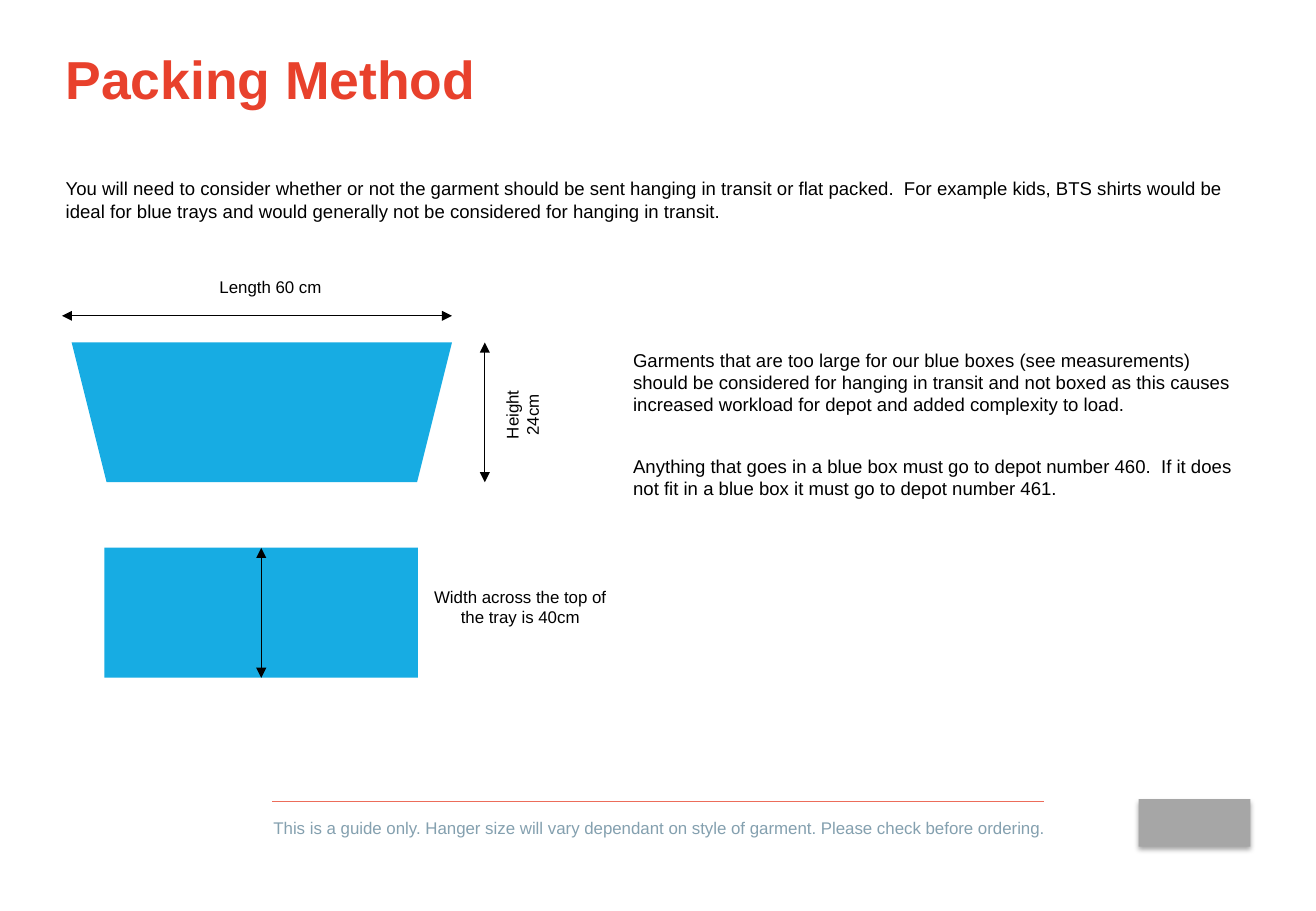
from lxml import etree
from pptx import Presentation
from pptx.dml.color import RGBColor
from pptx.enum.shapes import MSO_CONNECTOR, MSO_SHAPE
from pptx.enum.text import PP_ALIGN
from pptx.oxml.ns import qn
from pptx.util import Inches, Pt

RECTANGLE, TRAPEZOID = MSO_SHAPE.RECTANGLE, MSO_SHAPE.TRAPEZOID
STRAIGHT = MSO_CONNECTOR.STRAIGHT
LEFT, CENTER = PP_ALIGN.LEFT, PP_ALIGN.CENTER

BLACK = RGBColor(0x00, 0x00, 0x00)
RED = RGBColor(0xE8, 0x41, 0x2C)
SALMON = RGBColor(0xEC, 0x6C, 0x5A)
SLATE = RGBColor(0x84, 0xA0, 0xAF)
TRAY_BLUE = RGBColor(0x17, 0xAC, 0xE3)
GREY = RGBColor(0xA6, 0xA6, 0xA6)

COLUMNS, ROWS = 108.3, 75
MARGIN = 5.4
TRAY_TOP, TRAY_HEIGHT = 28.2, 11.5
TRAY_LEFT, TRAY_WIDTH = 5.9, 31.3
BASE_LEFT, BASE_TOP, BASE_WIDTH, BASE_HEIGHT = 8.6, 45.1, 25.8, 10.7


class Slide:
    styles = {
        "title": {"size": Pt(31.7), "bold": True, "color": RED},
        "body": {"size": Pt(11), "color": BLACK},
        "label": {"size": Pt(10), "color": BLACK},
        "footer": {"size": Pt(10), "color": SLATE},
    }

    def __init__(self, deck):
        self.page = deck.slides.add_slide(deck.slide_layouts[6])
        self.cell_width = deck.slide_width / COLUMNS
        self.cell_height = deck.slide_height / ROWS

    def place(self, *grid):
        cells = (self.cell_width, self.cell_height) * 2
        return [round(length * cell) for length, cell in zip(grid, cells)]

    def text(self, area, paragraphs, style, align=LEFT, inset=0, after=0, gap=0, vertical=False):
        box = self.page.shapes.add_textbox(*self.place(*area))
        frame = box.text_frame
        layout = {"word_wrap": True, "margin_left": inset, "margin_right": inset}
        for name, value in layout.items():
            setattr(frame, name, value)
        if vertical:
            frame._txBody.bodyPr.set("vert", "vert270")
        for index, words in enumerate(paragraphs):
            para = frame.add_paragraph() if index else frame.paragraphs[0]
            para.alignment = align
            para.space_after = Pt(after)
            if index:
                para.space_before = Pt(gap)
            span = para.add_run()
            span.text = words
            span.font.name = "Arial"
            for name, value in self.styles[style].items():
                if name == "color":
                    span.font.color.rgb = value
                else:
                    setattr(span.font, name, value)

    def block(self, area, color, kind=RECTANGLE, flipped=False):
        shape = self.page.shapes.add_shape(kind, *self.place(*area))
        shape.shadow.inherit = False
        shape.fill.solid()
        shape.fill.fore_color.rgb = color
        shape.line.fill.background()
        if flipped:
            shape._element.spPr.xfrm.set("flipV", "1")
        return shape

    def soft_shadow(self, shape):
        effects = shape._element.spPr.find(qn("a:effectLst"))
        shadow = etree.SubElement(
            effects, qn("a:outerShdw"), blurRad=str(Pt(3.1)), dist=str(Pt(1.8)),
            dir="5400000", algn="t", rotWithShape="0")
        color = etree.SubElement(shadow, qn("a:srgbClr"), val=str(BLACK))
        etree.SubElement(color, qn("a:alpha"), val="35000")

    def line(self, ends, color=BLACK, arrows=True):
        connector = self.page.shapes.add_connector(STRAIGHT, *self.place(*ends))
        connector.line.color.rgb = color
        connector.line.width = Pt(0.75)
        if arrows:
            outline = connector.line._get_or_add_ln()
            for end in ("a:headEnd", "a:tailEnd"):
                etree.SubElement(outline, qn(end), type="triangle")
        etree.SubElement(connector._element.spPr, qn("a:effectLst"))


def main():
    deck = Presentation()
    deck.slide_width, deck.slide_height = Inches(10.83), Inches(7.5)
    slide = Slide(deck)
    label = {"style": "label", "align": CENTER, "inset": Inches(0.1)}

    slide.soft_shadow(slide.block((93.7, 65.8, 9.2, 3.9), GREY))
    slide.text((21.8, 66.8, 64.8, 2.7), [
        "This is a guide only. Hanger size will vary dependant on style of garment. "
        "Please check before ordering."], "footer", CENTER)
    slide.line((22.4, 66, 85.9, 66), SALMON, arrows=False)

    slide.text((MARGIN, 3.3, 97.5, 6.4), ["Packing Method"], "title")
    slide.text((MARGIN, 14.1, 97.5, 49), [
        "You will need to consider whether or not the garment should be sent hanging in "
        "transit or flat packed.  For example kids, BTS shirts would be ideal for blue "
        "trays and would generally not be considered for hanging in transit."],
        "body", after=5.4)

    tray_right = TRAY_LEFT + TRAY_WIDTH
    slide.block((TRAY_LEFT, TRAY_TOP, TRAY_WIDTH, TRAY_HEIGHT), TRAY_BLUE, TRAPEZOID, flipped=True)
    slide.line((39.9, TRAY_TOP, 39.9, TRAY_TOP + TRAY_HEIGHT))
    slide.text((40.8, 29.6, 3.7, 9.1), ["Height 24cm"], vertical=True, **label)
    slide.line((tray_right, 26, 5.1, 26))
    slide.text((16.9, 22.3, 10.7, 3.7), ["Length 60 cm"], **label)

    base_middle = BASE_LEFT + BASE_WIDTH / 2
    slide.block((BASE_LEFT, BASE_TOP, BASE_WIDTH, BASE_HEIGHT), TRAY_BLUE)
    slide.line((base_middle, BASE_TOP, base_middle, BASE_TOP + BASE_HEIGHT))
    slide.text((34.4, 47.8, 16.8, 5.4), ["Width across the top of the tray is 40cm"], **label)

    slide.text((52.1, TRAY_TOP, 50.8, 49), [
        "Garments that are too large for our blue boxes (see measurements) should be "
        "considered for hanging in transit and not boxed as this causes increased "
        "workload for depot and added complexity to load.",
        "Anything that goes in a blue box must go to depot number 460.  If it does not "
        "fit in a blue box it must go to depot number 461."],
        "body", after=5.4, gap=18)

    deck.save("out.pptx")


if __name__ == "__main__":
    main()
